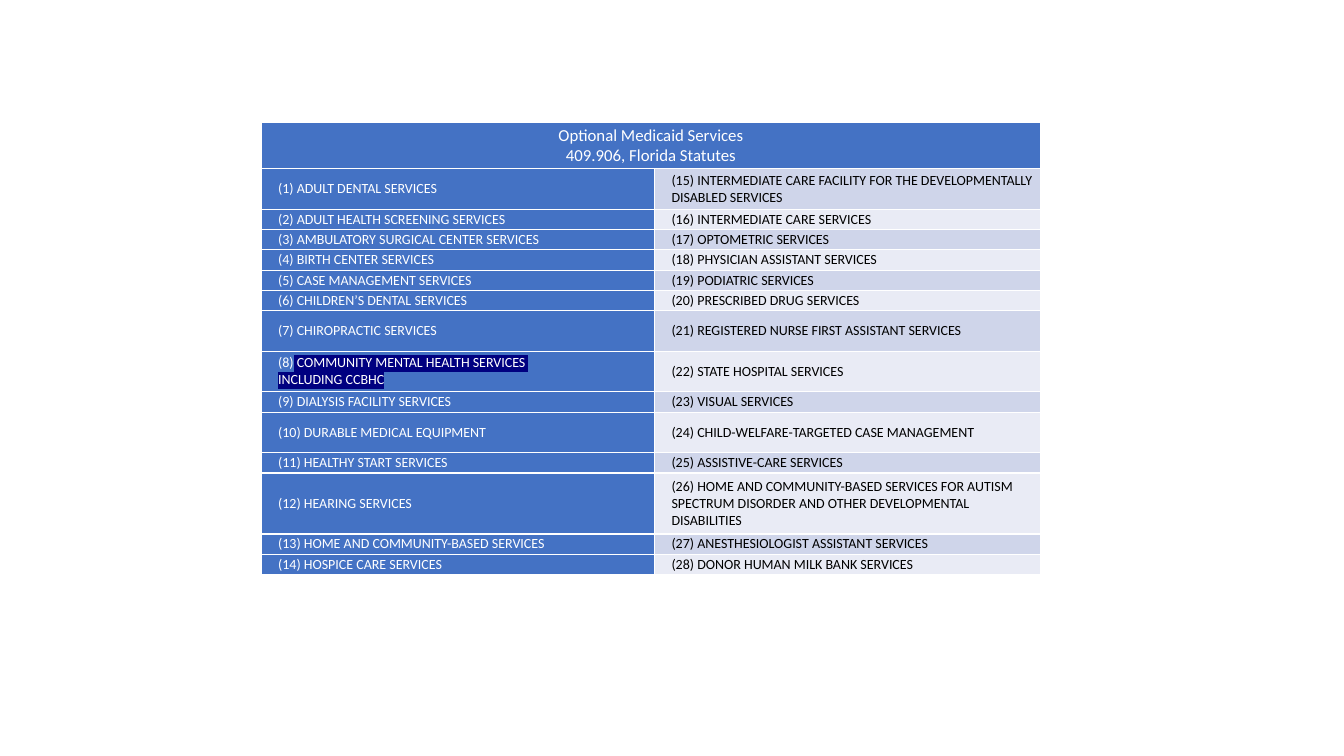
from dataclasses import dataclass

from lxml import etree
from pptx import Presentation
from pptx.dml.color import RGBColor
from pptx.enum.text import MSO_ANCHOR, PP_ALIGN
from pptx.oxml.ns import qn
from pptx.table import Table, _Cell
from pptx.text.text import _Paragraph, _Run
from pptx.util import Pt

MIDDLE = MSO_ANCHOR.MIDDLE
CENTER = PP_ALIGN.CENTER
LEFT = PP_ALIGN.LEFT
BLANK_LAYOUT = 6


@dataclass(frozen=True)
class Theme:
    font: str = "Calibri"
    header_size: float = 12
    body_size: float = 10
    accent: str = "4472C4"
    bands: tuple[str, str] = ("CFD5EA", "E9EBF5")
    light_text: str = "FFFFFF"
    dark_text: str = "000000"
    highlight: str = "000080"


@dataclass(frozen=True)
class ServiceRow:
    left: str
    right: str
    lines: int = 1
    spacing: float = 1
    highlighted: bool = False


THEME = Theme()
TABLE_LEFT, TABLE_TOP = 186.5, 87.5
COLUMN_WIDTHS = (281, 276)
HEADER_HEIGHT, LINE_HEIGHT = 33, 14.5
SIDE_MARGIN, INDENT = 5, 7.2
NARROW_SPACE = " "
PLAIN_SPACED_NUMBERS = range(9, 12)

HEADER_LINES = ("Optional Medicaid Services", "409.906, Florida Statutes")
SERVICES = (
    ServiceRow("ADULT DENTAL SERVICES",
               "INTERMEDIATE CARE FACILITY FOR THE DEVELOPMENTALLY DISABLED SERVICES", lines=2),
    ServiceRow("ADULT HEALTH SCREENING SERVICES", "INTERMEDIATE CARE SERVICES"),
    ServiceRow("AMBULATORY SURGICAL CENTER SERVICES", "OPTOMETRIC SERVICES"),
    ServiceRow("BIRTH CENTER SERVICES", "PHYSICIAN ASSISTANT SERVICES"),
    ServiceRow("CASE MANAGEMENT SERVICES", "PODIATRIC SERVICES"),
    ServiceRow("CHILDREN’S DENTAL SERVICES", "PRESCRIBED DRUG SERVICES"),
    ServiceRow("CHIROPRACTIC SERVICES", "REGISTERED NURSE FIRST ASSISTANT SERVICES", lines=2),
    ServiceRow("COMMUNITY MENTAL HEALTH SERVICES \nINCLUDING CCBHC", "STATE HOSPITAL SERVICES",
               lines=2, spacing=6, highlighted=True),
    ServiceRow("DIALYSIS FACILITY SERVICES", "VISUAL SERVICES"),
    ServiceRow("DURABLE MEDICAL EQUIPMENT", "CHILD-WELFARE-TARGETED CASE MANAGEMENT", lines=2),
    ServiceRow("HEALTHY START SERVICES", "ASSISTIVE-CARE SERVICES"),
    ServiceRow("HEARING SERVICES",
               "HOME AND COMMUNITY-BASED SERVICES FOR AUTISM SPECTRUM DISORDER "
               "AND OTHER DEVELOPMENTAL DISABILITIES", lines=3),
    ServiceRow("HOME AND COMMUNITY-BASED SERVICES", "ANESTHESIOLOGIST ASSISTANT SERVICES"),
    ServiceRow("HOSPICE CARE SERVICES", "DONOR HUMAN MILK BANK SERVICES"),
)


def format_cell(cell: _Cell, fill: str) -> None:
    cell.fill.solid()
    cell.fill.fore_color.rgb = RGBColor.from_string(fill)
    cell.vertical_anchor = MIDDLE
    cell.margin_left = cell.margin_right = Pt(SIDE_MARGIN)
    cell.margin_top = cell.margin_bottom = Pt(0)


def format_paragraph(para: _Paragraph, size: float, color: str, align: PP_ALIGN) -> None:
    para.alignment = align
    para.font.name = THEME.font
    para.font.size = Pt(size)
    para.font.bold = False
    para.font.color.rgb = RGBColor.from_string(color)


def highlight_run(span: _Run) -> None:
    highlight = etree.SubElement(span.font._element, qn("a:highlight"))
    etree.SubElement(highlight, qn("a:srgbClr"), val=THEME.highlight)


def fill_header(table: Table) -> None:
    header = table.cell(0, 0)
    header.merge(table.cell(0, 1))
    header.text = "\n".join(HEADER_LINES)
    format_cell(header, THEME.accent)
    for para in header.text_frame.paragraphs:
        format_paragraph(para, THEME.header_size, THEME.light_text, CENTER)


def fill_service(cell: _Cell, number: int, name: str, fill: str, color: str,
                 spacing: float, highlighted: bool) -> None:
    format_cell(cell, fill)
    para = cell.text_frame.paragraphs[0]
    format_paragraph(para, THEME.body_size, color, LEFT)
    para.space_before = para.space_after = Pt(spacing)
    para._p.get_or_add_pPr().set("marL", str(Pt(INDENT)))
    gap = " " if number in PLAIN_SPACED_NUMBERS else NARROW_SPACE
    if not highlighted:
        para.add_run().text = f"({number}){gap}{name}"
        return
    para.add_run().text = f"({number})"
    for index, line in enumerate(f"{gap}{name}".split("\n")):
        if index:
            para.add_line_break()
        span = para.add_run()
        span.text = line
        highlight_run(span)


def main() -> None:
    deck = Presentation()
    deck.slide_width, deck.slide_height = Pt(960), Pt(540)
    page = deck.slides.add_slide(deck.slide_layouts[BLANK_LAYOUT])

    heights = [HEADER_HEIGHT] + [LINE_HEIGHT * service.lines for service in SERVICES]
    table = page.shapes.add_table(
        len(heights), len(COLUMN_WIDTHS), Pt(TABLE_LEFT), Pt(TABLE_TOP),
        Pt(sum(COLUMN_WIDTHS)), Pt(sum(heights))).table
    for column, width in zip(table.columns, COLUMN_WIDTHS):
        column.width = Pt(width)
    for row, height in zip(table.rows, heights):
        row.height = Pt(height)

    fill_header(table)
    for number, service in enumerate(SERVICES, start=1):
        band = THEME.bands[(number - 1) % 2]
        fill_service(table.cell(number, 0), number, service.left, THEME.accent,
                     THEME.light_text, service.spacing, service.highlighted)
        fill_service(table.cell(number, 1), number + len(SERVICES), service.right, band,
                     THEME.dark_text, service.spacing, False)

    deck.save("out.pptx")


if __name__ == "__main__":
    main()
